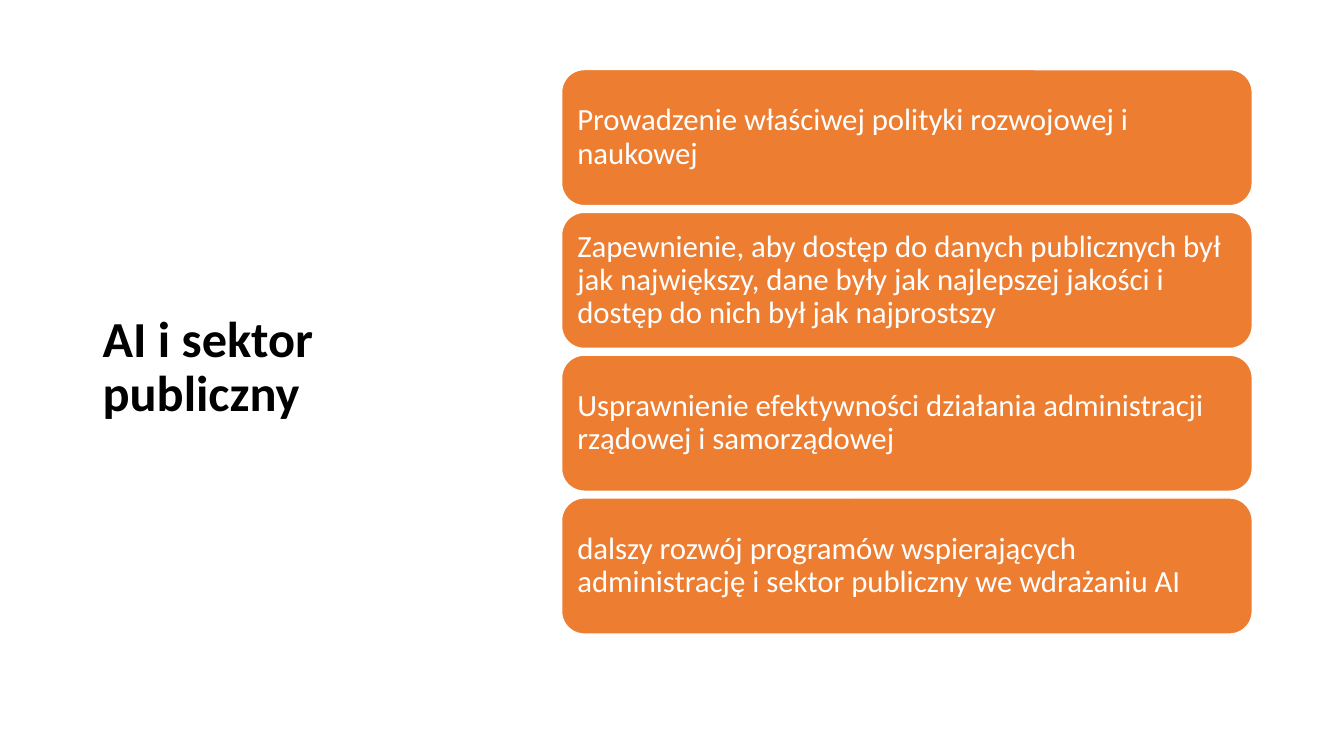
from dataclasses import dataclass

from pptx import Presentation, util as u
from pptx.dml.color import RGBColor
from pptx.enum import shapes, text

TITLE = "AI i sektor publiczny"
GOALS = [
    "Prowadzenie właściwej polityki rozwojowej i naukowej",
    "Zapewnienie, aby dostęp do danych publicznych był jak największy, "
    "dane były jak najlepszej jakości i dostęp do nich był jak najprostszy",
    "Usprawnienie efektywności działania administracji rządowej i samorządowej",
    "dalszy rozwój programów wspierających administrację i sektor publiczny "
    "we wdrażaniu AI",
]


@dataclass(frozen=True)
class Theme:
    font: str = "Calibri"
    ink: str = "000000"
    paper: str = "FFFFFF"
    card: str = "ED7D31"
    head: int = 36
    body: int = 22


THEME = Theme()
WIDE, HIGH = 13.33, 7.5
TITLE_BOX = (0.92, 0.61, 3.69, 6.09)
LEFT, TOP, CARD_W, CARD_H = 5.57, 0.69, 6.85, 1.35
STACK = 5.6  # height of all cards with their gaps
STEP = (STACK - CARD_H) / (len(GOALS) - 1)


def rgb(code):
    return RGBColor.from_string(code)


def write(shape, words, size, color, bold=False, side=0.1, edge=0.05):
    """Fill a shape with left-aligned, vertically centred text."""
    frame = shape.text_frame
    frame.word_wrap = True
    frame.vertical_anchor = text.MSO_ANCHOR.MIDDLE
    frame.margin_left = frame.margin_right = u.Inches(side)
    frame.margin_top = frame.margin_bottom = u.Inches(edge)
    para = frame.paragraphs[0]
    para.alignment = text.PP_ALIGN.LEFT
    para.line_spacing = 0.9
    run = para.add_run()
    run.text = words
    run.font.name = THEME.font
    run.font.size = u.Pt(size)
    run.font.bold = bold
    run.font.color.rgb = rgb(color)


def add_card(slide, row, words):
    card = slide.shapes.add_shape(
        shapes.MSO_SHAPE.ROUNDED_RECTANGLE,
        *map(u.Inches, (LEFT, TOP + row * STEP, CARD_W, CARD_H)))
    card.shadow.inherit = False
    card.fill.solid()
    card.fill.fore_color.rgb = rgb(THEME.card)
    card.line.color.rgb = rgb(THEME.paper)
    card.line.width = u.Pt(1)
    write(card, words, THEME.body, THEME.paper, side=0.09, edge=0.09)


def main():
    deck = Presentation()
    deck.slide_width, deck.slide_height = u.Inches(WIDE), u.Inches(HIGH)
    slide = deck.slides.add_slide(deck.slide_layouts[6])
    title = slide.shapes.add_textbox(*map(u.Inches, TITLE_BOX))
    write(title, TITLE, THEME.head, THEME.ink, bold=True)
    for row, words in enumerate(GOALS):
        add_card(slide, row, words)
    deck.save("out.pptx")


if __name__ == "__main__":
    main()
